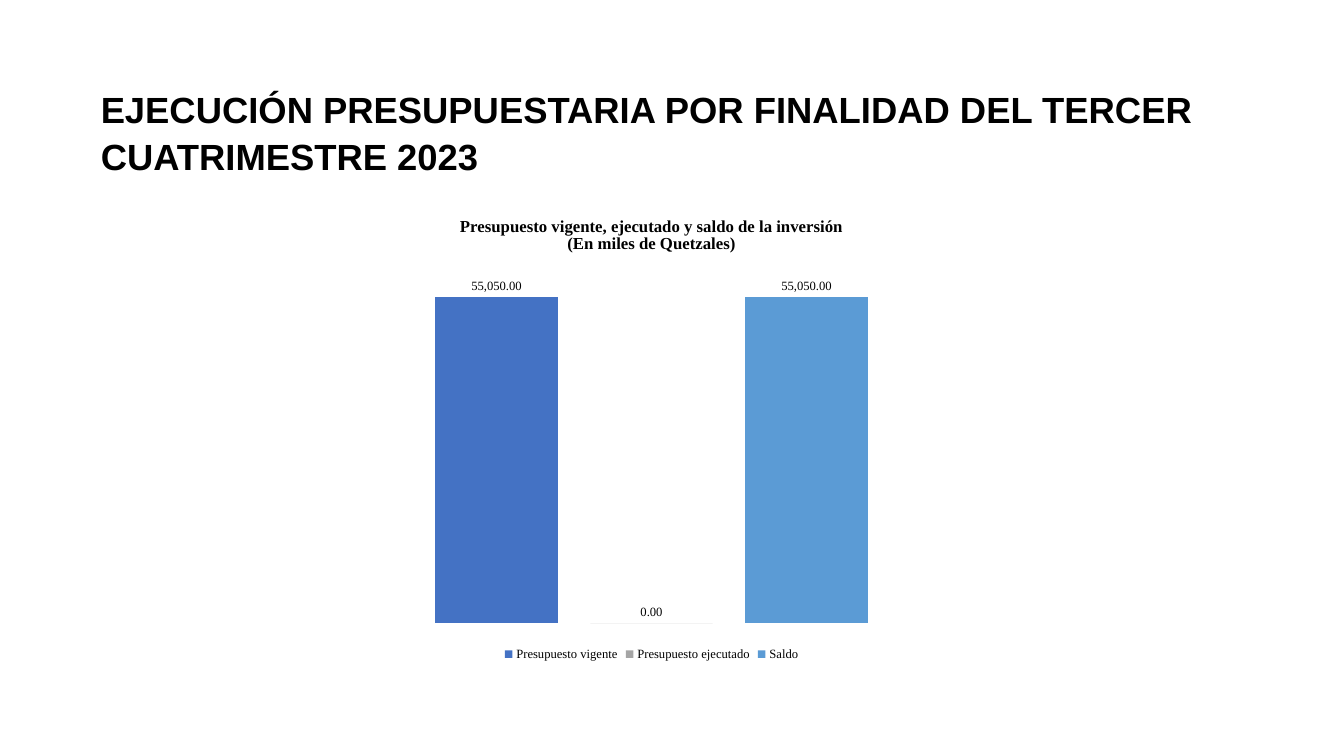
from dataclasses import dataclass

from lxml.etree import SubElement
from pptx import Presentation
from pptx.chart.data import CategoryChartData
from pptx.dml.color import RGBColor
from pptx.enum.chart import XL_CHART_TYPE, XL_LABEL_POSITION, XL_LEGEND_POSITION
from pptx.enum.text import PP_ALIGN
from pptx.oxml.ns import qn
from pptx.util import Cm, Pt


@dataclass(frozen=True)
class Theme:
    ink: RGBColor = RGBColor(0, 0, 0)
    heading_font: str = "Arial"
    chart_font: str = "Times New Roman"
    heading_size: int = 26
    chart_title_size: int = 12
    chart_size: int = 10
    label_size: int = 9


THEME = Theme()
NUMBER_FORMAT = "#,##0.00"
HEADING = "EJECUCIÓN PRESUPUESTARIA POR FINALIDAD DEL TERCER CUATRIMESTRE 2023"
CHART_TITLE = [
    "Presupuesto vigente, ejecutado y saldo de la inversión",
    "(En miles de Quetzales)",
]
BUDGET = [
    ("Presupuesto vigente", 55050, "4472C4"),
    ("Presupuesto ejecutado", 0, "A5A5A5"),
    ("Saldo", 55050, "5B9BD5"),
]


def style_font(font, name, size, bold=False):
    font.name = name
    font.size = Pt(size)
    font.bold = bold
    font.color.rgb = THEME.ink


def add_heading(page, box):
    frame = page.shapes.add_textbox(*box).text_frame
    frame.word_wrap = True
    para = frame.paragraphs[0]
    para.text = HEADING
    para.line_spacing = 1.07
    style_font(para.font, THEME.heading_font, THEME.heading_size, bold=True)


def set_plot_layout(chart, **fractions):
    """Fix the inner plot area as fractions (x, y, w, h) of the chart."""
    plot_area = chart._chartSpace.chart.plotArea
    layout = plot_area.find(qn("c:layout"))
    if layout is None:
        layout = SubElement(plot_area, qn("c:layout"))
        plot_area.insert(0, layout)
    manual = SubElement(layout, qn("c:manualLayout"))
    settings = {"layoutTarget": "inner", "xMode": "edge", "yMode": "edge", **fractions}
    for tag, value in settings.items():
        SubElement(manual, qn(f"c:{tag}")).set("val", str(value))


def add_chart_title(chart):
    chart.has_title = True
    chart.chart_title.include_in_layout = False
    frame = chart.chart_title.text_frame
    frame.text = "\n".join(CHART_TITLE)
    for para in frame.paragraphs:
        para.alignment = PP_ALIGN.CENTER
        para.line_spacing = 0.9
        style_font(para.font, THEME.chart_font, THEME.chart_title_size, bold=True)


def add_budget_chart(page, box):
    data = CategoryChartData(number_format=NUMBER_FORMAT)
    data.categories = ["1"]
    for name, amount, _ in BUDGET:
        data.add_series(name, [amount])
    chart = page.shapes.add_chart(XL_CHART_TYPE.COLUMN_CLUSTERED, *box, data).chart
    style_font(chart.font, THEME.chart_font, THEME.chart_size)
    add_chart_title(chart)
    set_plot_layout(chart, x=0.02, y=0.15, w=0.96, h=0.76)

    chart.category_axis.visible = False
    chart.value_axis.visible = False
    chart.value_axis.has_major_gridlines = False
    chart.value_axis.minimum_scale = 0
    chart.value_axis.maximum_scale = 60000

    chart.has_legend = True
    chart.legend.position = XL_LEGEND_POSITION.BOTTOM
    chart.legend.include_in_layout = False
    style_font(chart.legend.font, THEME.chart_font, THEME.label_size)

    plot = chart.plots[0]
    plot.gap_width = 219
    plot.overlap = -27
    plot.vary_by_categories = False
    for series, (_, _, color) in zip(plot.series, BUDGET):
        series.format.fill.solid()
        series.format.fill.fore_color.rgb = RGBColor.from_string(color)
        labels = series.data_labels
        labels.show_value = True
        labels.number_format = NUMBER_FORMAT
        labels.number_format_is_linked = False
        labels.position = XL_LABEL_POSITION.OUTSIDE_END
        style_font(labels.font, THEME.chart_font, THEME.label_size)


def main():
    deck = Presentation()
    deck.slide_width, deck.slide_height = Cm(33.87), Cm(19.05)
    page = deck.slides.add_slide(deck.slide_layouts[6])
    add_heading(page, (Cm(2.29), Cm(2), Cm(29.26), Cm(2.5)))
    add_budget_chart(page, (Cm(7.24), Cm(4.98), Cm(18.36), Cm(11.79)))
    deck.save("out.pptx")


if __name__ == "__main__":
    main()
